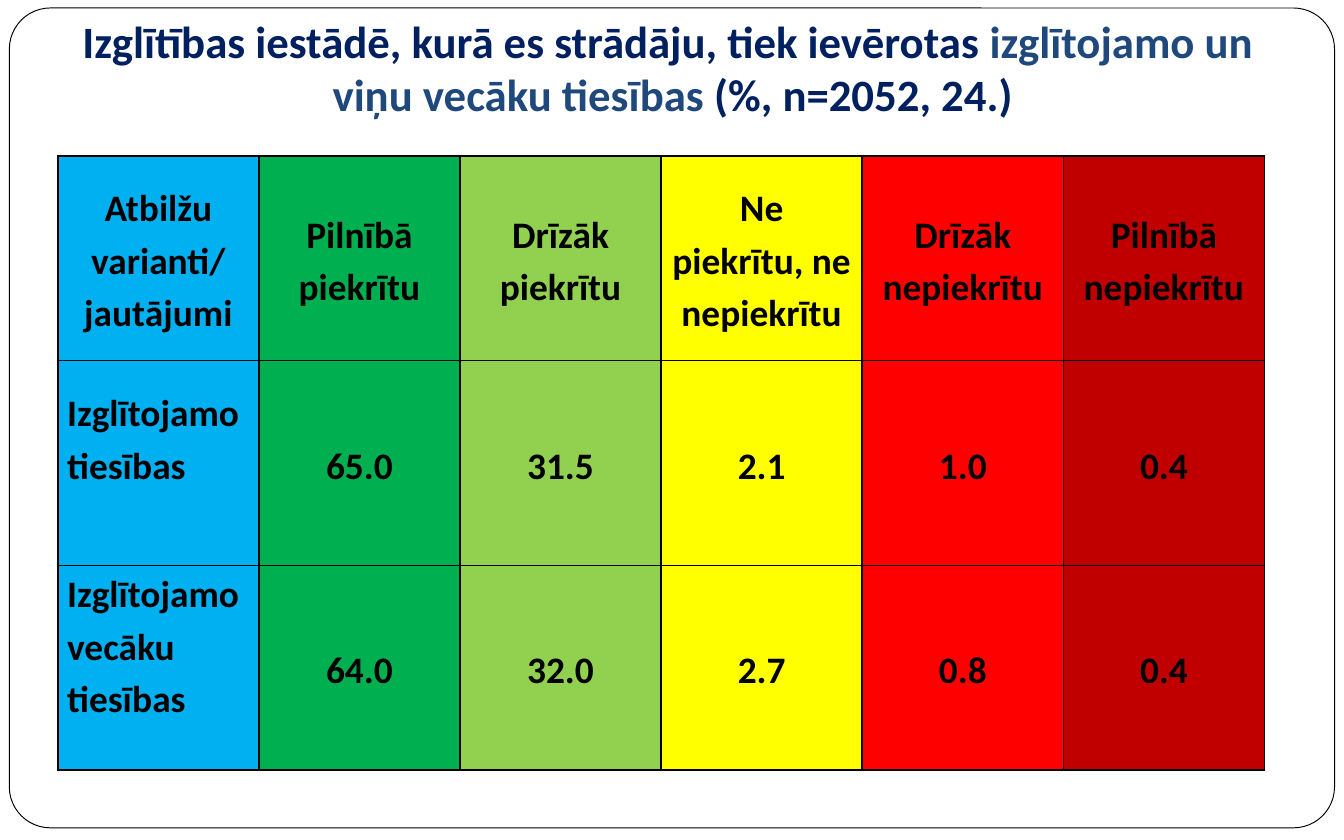
import pptx
import pptx.util
import pptx.dml.color
import pptx.enum.shapes
import pptx.enum.text
import pptx.oxml
import pptx.oxml.ns

Inches = pptx.util.Inches
Pt = pptx.util.Pt
ALIGN = pptx.enum.text.PP_ALIGN
ANCHOR = pptx.enum.text.MSO_ANCHOR

NAVY, BLUE, BLACK, WHITE = "002060", "1F497D", "000000", "FFFFFF"
COLUMN_FILLS = ["00B0F0", "00B050", "92D050", "FFFF00", "FF0000", "C00000"]
ANSWERS = [
    ["Atbilžu varianti/\njautājumi", "Pilnībā piekrītu", "Drīzāk piekrītu",
     "Ne piekrītu, ne nepiekrītu", "Drīzāk nepiekrītu", "Pilnībā nepiekrītu"],
    ["Izglītojamo tiesības", "65.0", "31.5", "2.1", "1.0", "0.4"],
    ["Izglītojamo vecāku tiesības", "64.0", "32.0", "2.7", "0.8", "0.4"],
]


def color(value):
    return pptx.dml.color.RGBColor.from_string(value)


def format_span(span, size, value):
    span.font.name = "Calibri"
    span.font.size = Pt(size)
    span.font.bold = True
    span.font.color.rgb = color(value)


def add_frame(page, left, top, width, height):
    frame = page.shapes.add_shape(
        pptx.enum.shapes.MSO_SHAPE.ROUNDED_RECTANGLE,
        Inches(left), Inches(top), Inches(width), Inches(height))
    frame.adjustments[0] = 0.05
    frame.shadow.inherit = False
    frame.fill.solid()
    frame.fill.fore_color.rgb = color(WHITE)
    frame.line.color.rgb = color(BLACK)
    frame.line.width = Pt(0.5)


def add_title(page, left, top, width, height):
    box = page.shapes.add_textbox(Inches(left), Inches(top), Inches(width), Inches(height))
    frame = box.text_frame
    frame.word_wrap = True
    frame.vertical_anchor = ANCHOR.BOTTOM
    frame.margin_bottom = Inches(0.1)
    para = frame.paragraphs[0]
    para.alignment = ALIGN.CENTER

    def add_span(text, value):
        span = para.add_run()
        span.text = text
        format_span(span, 24, value)

    add_span("Izglītības iestādē, kurā es strādāju, tiek ievērotas ", NAVY)
    add_span("izglītojamo un ", BLUE)
    para.add_line_break()
    add_span("viņu vecāku tiesības ", BLUE)
    add_span("(%, n=2052, 24.)", NAVY)


def add_borders(cell):
    properties = cell._tc.get_or_add_tcPr()
    for position, side in enumerate(("lnL", "lnR", "lnT", "lnB")):
        # Border lines come before the fill in the cell properties
        properties.insert(position, pptx.oxml.parse_xml(
            f'<a:{side} {pptx.oxml.ns.nsdecls("a")} w="{Pt(1)}"><a:solidFill>'
            f'<a:srgbClr val="{BLACK}"/></a:solidFill></a:{side}>'))


def fill_cell(cell, text, fill, alignment):
    cell.fill.solid()
    cell.fill.fore_color.rgb = color(fill)
    add_borders(cell)
    cell.margin_left = cell.margin_right = Inches(0.07)
    cell.margin_top = cell.margin_bottom = 0
    cell.vertical_anchor = ANCHOR.MIDDLE
    cell.text_frame.text = text
    for para in cell.text_frame.paragraphs:
        para.alignment = alignment
        para.line_spacing = 1.15
        for span in para.runs:
            format_span(span, 20, BLACK)


def add_answers(page, left, top, width, height):
    table = page.shapes.add_table(
        len(ANSWERS), len(COLUMN_FILLS),
        Inches(left), Inches(top), Inches(width), Inches(height)).table
    for column in table.columns:
        column.width = Inches(width / len(COLUMN_FILLS))
    for row in table.rows:
        row.height = Inches(height / len(ANSWERS))
    for r, texts in enumerate(ANSWERS):
        for c, text in enumerate(texts):
            alignment = ALIGN.LEFT if r and not c else ALIGN.CENTER
            fill_cell(table.cell(r, c), text, COLUMN_FILLS[c], alignment)
    # The question labels sit above the middle of their rows
    table.cell(1, 0).margin_bottom = Inches(0.39)
    table.cell(2, 0).vertical_anchor = ANCHOR.TOP


def main():
    deck = pptx.Presentation()
    deck.slide_width, deck.slide_height = Inches(10), Inches(6.25)
    page = deck.slides.add_slide(deck.slide_layouts[6])
    add_frame(page, 0.07, 0.06, 9.86, 6.1)
    add_title(page, 0.2, 0, 9.61, 1)
    add_answers(page, 0.43, 1.16, 8.98, 4.57)
    deck.save("out.pptx")


if __name__ == "__main__":
    main()
